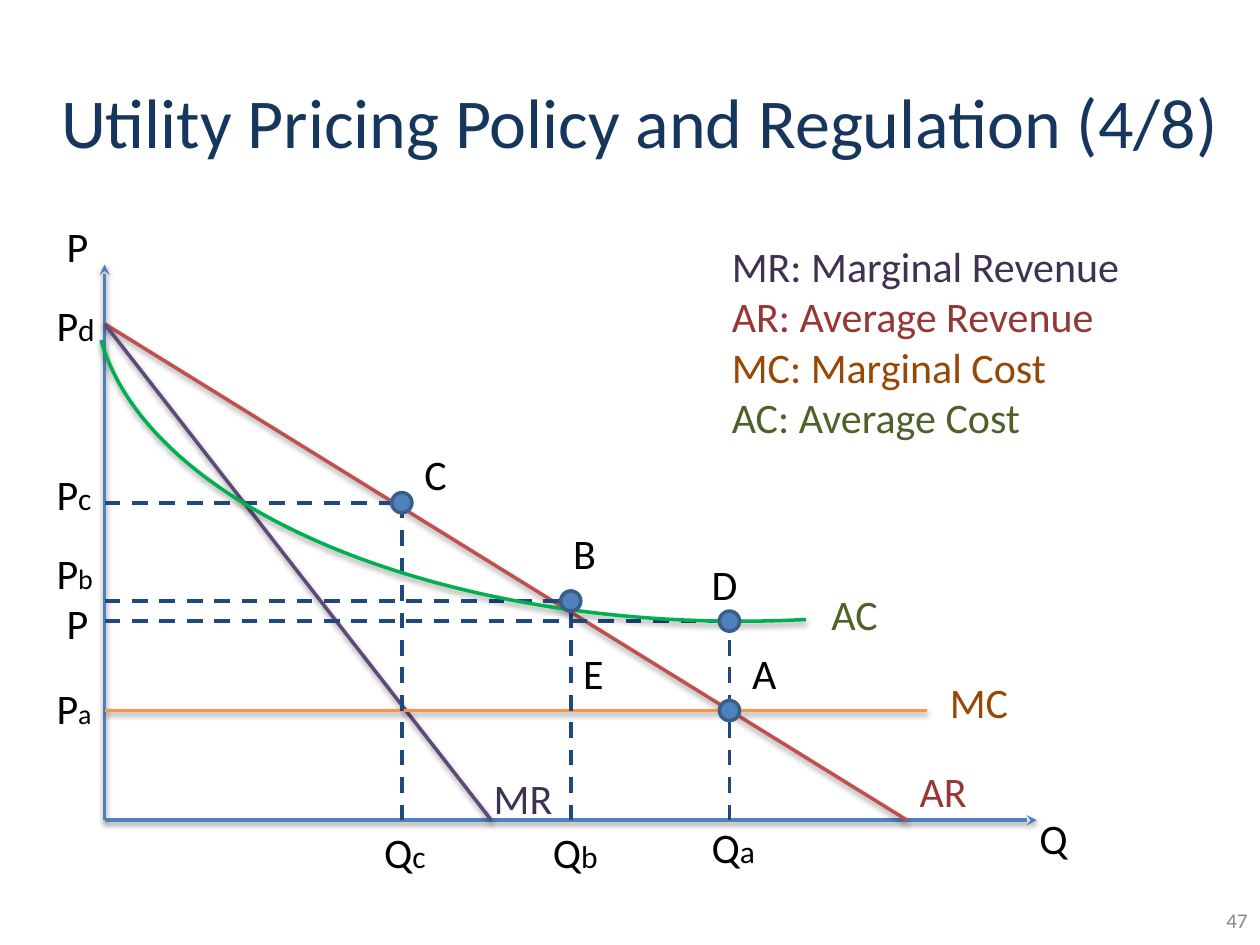
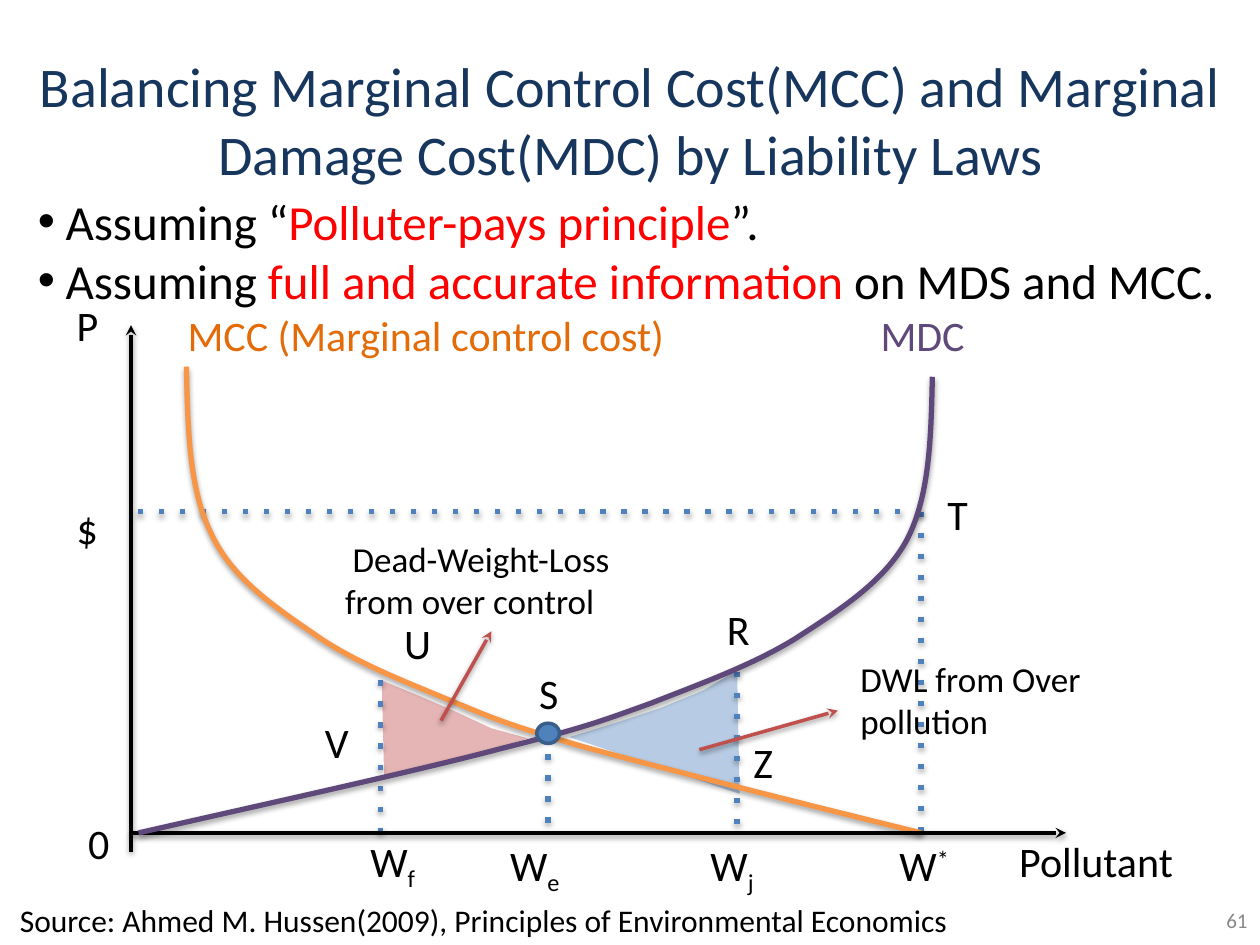
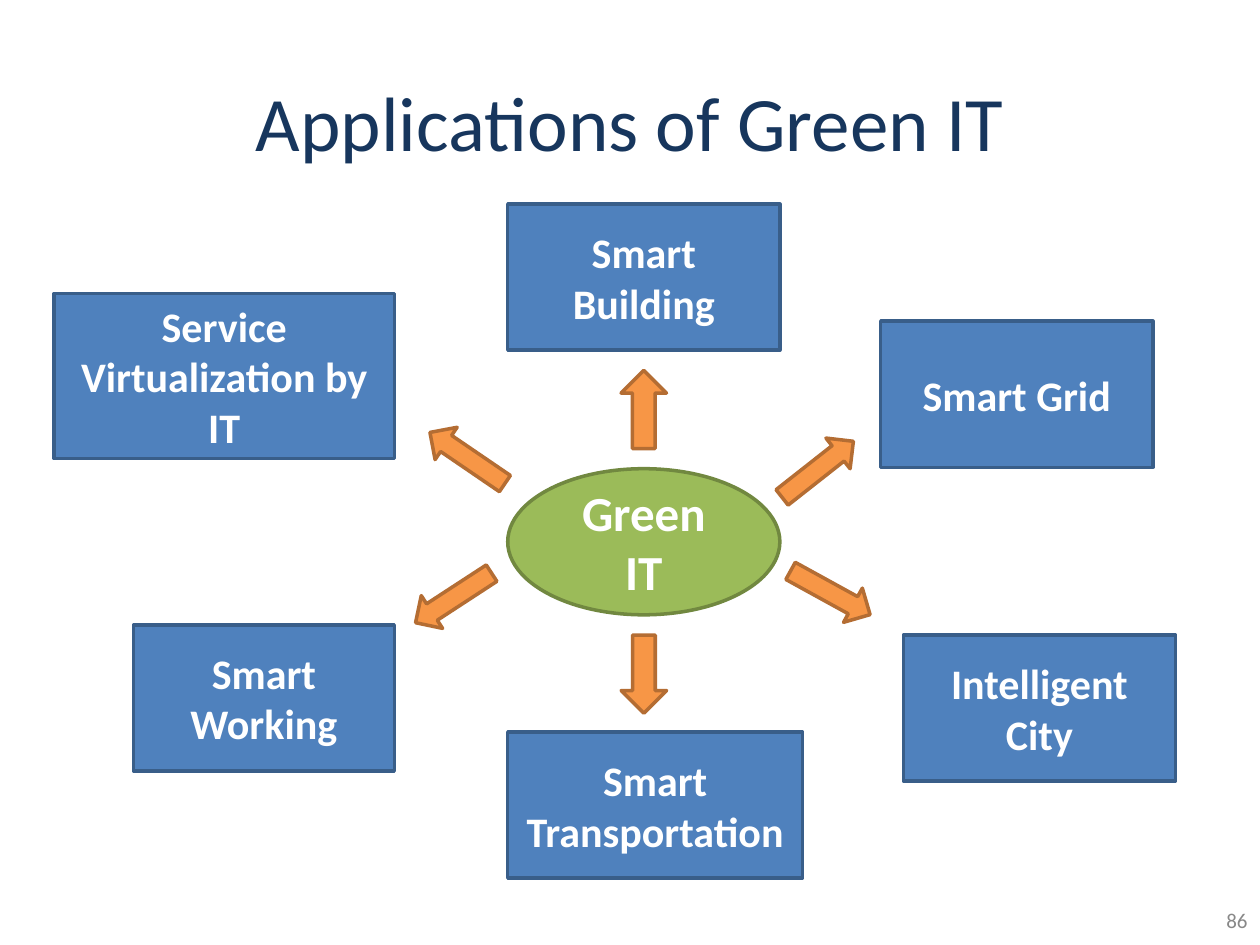
from dataclasses import dataclass
from typing import NamedTuple, Optional, Sequence

from lxml.etree import SubElement
from pptx import Presentation
from pptx.dml.color import RGBColor
from pptx.enum.shapes import MSO_CONNECTOR, MSO_SHAPE
from pptx.enum.text import MSO_ANCHOR as Anchor, MSO_AUTO_SIZE, PP_ALIGN as Align
from pptx.oxml.ns import qn
from pptx.util import Inches, Pt


# Theme and records
@dataclass(frozen=True)
class Theme:
    font: str = "Calibri"
    navy: str = "17365D"
    black: str = "000000"
    white: str = "FFFFFF"
    grey: str = "888888"
    red: str = "FF0000"
    blue: str = "4F81BD"
    blue_edge: str = "395E89"
    guide: str = "1F497D"
    brick: str = "C0504D"
    purple: str = "5F497A"
    orange: str = "F79646"
    orange_edge: str = "B46D33"
    orange_text: str = "E36C09"
    lime: str = "9BBB59"
    lime_edge: str = "718840"
    green: str = "00B050"
    mr_text: str = "3F3151"
    ar_text: str = "953734"
    mc_text: str = "974806"
    ac_text: str = "4F6128"
    over_control: str = "D99593"
    over_pollution: str = "B7CCE4"
    hub: int = 28
    body: int = 28
    label: int = 24
    callout: int = 20
    small: int = 18
    number: int = 12


T = Theme()


class Point(NamedTuple):
    x: float
    y: float


class Label(NamedTuple):
    """A chart label; its index is a smaller or a raised/lowered run."""
    text: str
    x: float
    y: float
    width: float = 0.55
    color: str = T.black
    index: str = ""
    index_size: Optional[int] = None
    baseline: int = 0


class Line(NamedTuple):
    start: Point
    end: Point
    color: str
    width: float = 2
    dash: str = ""
    arrow: bool = False
    shadow: bool = True


class Box(NamedTuple):
    text: str
    x: float
    y: float
    width: float = 2.16
    height: float = 1.16


class Arrow(NamedTuple):
    x: float
    y: float
    angle: float
    width: float = 0.72
    height: float = 0.31


# Drawing helpers
def rgb(color: str) -> RGBColor:
    return RGBColor.from_string(color)


def set_font(font, size: float, color: str, bold: Optional[bool] = None) -> None:
    font.name, font.size, font.bold = T.font, Pt(size), bold
    font.color.rgb = rgb(color)


def set_shadow(sp, on: bool) -> None:
    """Give a shape its effect list; call it after the line is set."""
    effects = SubElement(sp._element.spPr, qn("a:effectLst"))
    if on:
        shadow = SubElement(effects, qn("a:outerShdw"), blurRad="40000", dist="20000",
                            dir="5400000", rotWithShape="0")
        color = SubElement(shadow, qn("a:srgbClr"), val=T.black)
        SubElement(color, qn("a:alpha"), val="38000")


def style(sp, fill: str = "", line: str = "", width: float = 2, shadow: bool = False) -> None:
    if fill:
        sp.fill.solid()
        sp.fill.fore_color.rgb = rgb(fill)
    else:
        sp.fill.background()
    if line:
        sp.line.color.rgb = rgb(line)
        sp.line.width = Pt(width)
    else:
        sp.line.fill.background()
    set_shadow(sp, shadow)


def add_line(shapes, line: Line) -> None:
    ends = [Inches(v) for v in (*line.start, *line.end)]
    sp = shapes.add_connector(MSO_CONNECTOR.STRAIGHT, *ends)
    sp.line.color.rgb = rgb(line.color)
    sp.line.width = Pt(line.width)
    ln = sp.line._get_or_add_ln()
    if line.dash:
        SubElement(ln, qn("a:prstDash"), val=line.dash)
    if line.arrow:
        SubElement(ln, qn("a:tailEnd"), type="stealth")
    set_shadow(sp, line.shadow)


def add_shape(shapes, kind, x: float, y: float, width: float, height: float):
    return shapes.add_shape(kind, Inches(x), Inches(y), Inches(width), Inches(height))


def add_dot(shapes, center: Point, width: float = 0.16, height: float = 0.16) -> None:
    sp = add_shape(shapes, MSO_SHAPE.OVAL, center.x - width / 2, center.y - height / 2,
                   width, height)
    style(sp, T.blue, T.blue_edge)


def add_text(shapes, lines: Sequence[tuple[str, str]], x: float, y: float, width: float,
             height: float = 0.5, size: float = T.label):
    """Add a text box with one paragraph for each (text, color) pair."""
    tf = shapes.add_textbox(Inches(x), Inches(y), Inches(width), Inches(height)).text_frame
    tf.word_wrap = True
    for i, (text, color) in enumerate(lines):
        p = tf.add_paragraph() if i else tf.paragraphs[0]
        p.text = text
        set_font(p.font, size, color)
    return tf


def add_label(shapes, label: Label) -> None:
    tf = add_text(shapes, [(label.text, label.color)], label.x, label.y, label.width)
    if label.index:
        r = tf.paragraphs[0].add_run()
        r.text = label.index
        if label.index_size:
            r.font.size = Pt(label.index_size)
        if label.baseline:
            r._r.get_or_add_rPr().set("baseline", str(label.baseline * 1000))


def add_outline(shapes, points: Sequence[tuple[float, float]], close: bool):
    start, *rest = [(Inches(x), Inches(y)) for x, y in points]
    builder = shapes.build_freeform(*start)
    builder.add_line_segments(rest, close=close)
    return builder.convert_to_shape()


def add_curve(shapes, points: Sequence[tuple[float, float]], color: str) -> None:
    """Draw a start point and triples of Bézier points as one curve."""
    sp = add_outline(shapes, points, close=False)
    outline = next(sp._element.iter(qn("a:path")))
    segments = outline.findall(qn("a:lnTo"))
    for i in range(0, len(segments), 3):
        bezier = SubElement(outline, qn("a:cubicBezTo"))
        for segment in segments[i:i + 3]:
            bezier.append(segment[0])
            outline.remove(segment)
    style(sp, line=color, width=3, shadow=True)


def place(sp, x: float, y: float, width: float, height: float) -> None:
    sp.left, sp.top, sp.width, sp.height = map(Inches, (x, y, width, height))
    sp.text_frame.auto_size = MSO_AUTO_SIZE.NONE


def new_slide(prs, layout: int, title: str, size: int, number: int,
              frame: tuple[float, float, float, float]):
    s = prs.slides.add_slide(prs.slide_layouts[layout])
    sp = s.shapes.title
    place(sp, *frame)
    sp.text_frame.vertical_anchor = Anchor.MIDDLE
    p = sp.text_frame.paragraphs[0]
    p.text, p.alignment = title, Align.CENTER
    set_font(p.font, size, T.navy)
    tf = add_text(s.shapes, [(str(number), T.grey)], 7.67, 7.1, 2.33, 0.4, T.number)
    tf.vertical_anchor = Anchor.MIDDLE
    tf.paragraphs[0].alignment = Align.RIGHT
    return s


# Slide 1: utility pricing
def pricing_slide(prs) -> None:
    s = new_slide(prs, 5, "Utility Pricing Policy and Regulation (4/8)", 40, 47,
                  (0.35, 0.68, 9.45, 0.55))
    origin, top = Point(0.83, 6.51), Point(0.83, 2.57)
    c, b, d, a = Point(3.19, 3.99), Point(4.53, 4.77), Point(5.79, 4.93), Point(5.79, 5.64)

    # Axes, revenue and cost lines
    lines = [
        Line(origin, Point(origin.x, 2.1), T.blue, arrow=True),
        Line(origin, Point(8.23, origin.y), T.blue, arrow=True),
        Line(top, Point(7.2, origin.y), T.brick),
        Line(top, Point(3.9, origin.y), T.purple),
        Line(Point(origin.x, a.y), Point(7.36, a.y), T.orange),
    ]
    # Guides from each point to both axes
    for point in (c, b, d):
        for foot in (Point(point.x, origin.y), Point(origin.x, point.y)):
            lines.append(Line(foot, point, T.guide, 2.25, "dash", shadow=False))
    for line in lines:
        add_line(s.shapes, line)

    # Average cost curve
    arc = add_shape(s.shapes, MSO_SHAPE.ARC, 0.75, -0.27, 10.24, 5.2)
    arc.rotation = 180
    arc.adjustments[0], arc.adjustments[1] = 155.1, 213.5
    style(arc, line=T.green, shadow=True)

    for point in (c, b, d, a):
        add_dot(s.shapes, point)

    for label in (
        Label("P", 0.43, 1.7), Label("Q", 8.15, 6.4), Label("P", 0.43, 4.69),
        Label("D", 5.55, 4.38), Label("A", 5.87, 5.09), Label("B", 4.45, 4.14),
        Label("E", 4.53, 5.09), Label("C", 3.27, 3.51),
        Label("MC", 7.44, 5.32, 0.79, T.mc_text),
        Label("AR", 7.2, 6.03, 0.87, T.ar_text),
        Label("MR", 3.82, 6.08, 0.87, T.mr_text),
        Label("AC", 6.5, 4.62, 0.87, T.ac_text),
        Label("P", 0.35, 2.33, index="d", index_size=18),
        Label("P", 0.35, 3.67, index="c", index_size=18),
        Label("P", 0.35, 4.3, index="b", index_size=16),
        Label("P", 0.35, 5.37, index="a", index_size=16),
        Label("Q", 5.55, 6.47, 0.71, index="a", index_size=18),
        Label("Q", 4.29, 6.51, 0.63, index="b", index_size=18),
        Label("Q", 2.95, 6.51, index="c", index_size=18),
    ):
        add_label(s.shapes, label)

    add_text(s.shapes, [
        ("MR: Marginal Revenue", T.mr_text), ("AR: Average Revenue", T.ar_text),
        ("MC: Marginal Cost", T.mc_text), ("AC: Average Cost", T.ac_text),
    ], 5.71, 1.86, 3.7, 1.72)


# Slide 2: liability laws
def liability_slide(prs) -> None:
    s = new_slide(prs, 1, "Balancing Marginal Control Cost(MCC) and Marginal "
                  "Damage Cost(MDC) by Liability Laws", 32, 61, (0.2, 0.44, 9.61, 1.01))

    # Assumptions
    body = s.placeholders[1]
    place(body, 0.2, 1.47, 9.57, 1.04)
    tf = body.text_frame
    for i, parts in enumerate((
        ("Assuming “", "Polluter-pays principle", "”."),
        ("Assuming ", "full and accurate information ", "on MDS and MCC."),
    )):
        p = tf.add_paragraph() if i else tf.paragraphs[0]
        pPr = p._p.get_or_add_pPr()
        pPr.set("marL", str(Inches(0.22)))
        pPr.set("indent", str(Inches(-0.22)))
        p.space_before = Pt(0)
        set_font(p.font, T.body, T.black)
        for text in parts:
            r = p.add_run()
            r.text = text
            if text == parts[1]:
                r.font.color.rgb = rgb(T.red)

    # Dead-weight-loss areas
    area = add_outline(s.shapes, [(3.03, 5.4), (3.05, 6.18), (3.5, 6.08), (4.19, 5.86),
                                  (3.9, 5.78), (3.62, 5.65), (3.32, 5.52)], close=True)
    style(area, T.over_control)
    color = next(area._element.spPr.iter(qn("a:srgbClr")))
    SubElement(color, qn("a:alpha"), val="69000")
    area = add_outline(s.shapes, [(5.85, 5.32), (5.87, 6.3), (4.52, 5.85), (4.94, 5.72),
                                  (5.24, 5.62), (5.58, 5.48)], close=True)
    style(area, T.over_pollution)

    # Chart: guides, curves, axes, labels
    chart = s.shapes.add_group_shape().shapes
    origin, t = Point(1.04, 6.61), Point(7.31, 4.06)
    for start, end in (
        (Point(4.35, 5.82), Point(4.35, 6.64)),
        (Point(5.85, 5.33), Point(5.85, 6.64)),
        (Point(3.02, 5.4), Point(3.02, 6.64)),
        (t, Point(t.x, origin.y)),
        (t, Point(1.06, t.y)),
    ):
        add_line(chart, Line(start, end, T.blue, 3, "dot"))
    add_curve(chart, [
        (1.48, 2.91), (1.49, 3.39), (1.5, 3.87), (1.67, 4.22), (1.83, 4.58), (2.17, 4.81),
        (2.49, 5.03), (2.8, 5.25), (3.19, 5.4), (3.55, 5.55), (3.91, 5.7), (4.02, 5.75),
        (4.64, 5.93), (5.27, 6.1), (6.29, 6.36), (7.31, 6.61)], T.orange)
    for end in (Point(8.46, origin.y), Point(origin.x, 2.58)):
        add_line(chart, Line(origin, end, T.black, arrow=True))
    # Stub of the vertical axis below the origin
    add_line(chart, Line(origin, Point(origin.x, 6.76), T.black))
    add_curve(chart, [
        (7.4, 2.99), (7.39, 3.46), (7.38, 3.93), (7.2, 4.28), (7.02, 4.62), (6.65, 4.85),
        (6.31, 5.07), (5.97, 5.28), (5.55, 5.43), (5.17, 5.58), (4.78, 5.72), (4.66, 5.77),
        (3.98, 5.94), (3.3, 6.12), (2.2, 6.36), (1.1, 6.61)], T.purple)
    add_dot(chart, Point(4.35, 5.82), 0.18)
    for label in (
        Label("MDC", 6.89, 2.41, 2.03, T.purple),
        Label("MCC (Marginal control cost)", 1.39, 2.41, 4.63, T.orange_text),
        Label("P", 0.51, 2.33), Label("0", 0.6, 6.44), Label("$", 0.51, 3.94),
        Label("T", 7.42, 3.83), Label("S", 4.18, 5.25), Label("R", 5.67, 4.74),
        Label("U", 3.11, 4.85), Label("V", 2.48, 5.64), Label("Z", 5.88, 5.8),
        Label("Pollutant", 7.99, 6.58, 1.81),
        Label("W", 2.84, 6.58, 0.72, index="f", baseline=-25),
        Label("W", 3.95, 6.61, 0.71, index="e", baseline=-25),
        Label("W", 5.54, 6.61, 0.71, index="j", baseline=-25),
        Label("W", 7.04, 6.61, 0.71, index="*", baseline=30),
    ):
        add_label(chart, label)

    # Callouts and source
    tf = add_text(s.shapes, [("Dead-Weight-Loss from over control", T.black)],
                  2.64, 4.22, 2.84, 0.77, T.callout)
    tf.paragraphs[0]._p.get_or_add_pPr().set("indent", str(Inches(0.06)))
    add_text(s.shapes, [("DWL from Over pollution", T.black)], 6.73, 5.17, 2.64, 0.77, T.callout)
    add_line(s.shapes, Line(Point(3.5, 5.72), Point(3.9, 5.01), T.brick, arrow=True))
    add_line(s.shapes, Line(Point(5.55, 5.95), Point(6.65, 5.64), T.brick, arrow=True))
    add_text(s.shapes, [("Source: Ahmed M. Hussen(2009), Principles of Environmental Economics",
                         T.black)], 0.06, 7.1, 7.84, 0.4, T.small)


# Slide 3: applications around a hub
def add_node(shapes, kind, box: Box, fill: str, edge: str, size: int) -> None:
    sp = add_shape(shapes, kind, box.x, box.y, box.width, box.height)
    style(sp, fill, edge)
    tf = sp.text_frame
    tf.word_wrap, tf.vertical_anchor = True, Anchor.MIDDLE
    tf.text = box.text
    for p in tf.paragraphs:
        p.alignment = Align.CENTER
        set_font(p.font, size, T.white, bold=True)


def applications_slide(prs) -> None:
    s = new_slide(prs, 5, "Applications of Green IT", 44, 86, (0.5, 0.68, 9, 0.55))
    add_node(s.shapes, MSO_SHAPE.OVAL, Box("Green IT", 4.03, 3.72), T.lime, T.lime_edge, T.hub)
    for box in (
        Box("Smart Transportation", 4.03, 5.81, 2.34),
        Box("Intelligent\nCity", 7.17, 5.04),
        Box("Smart Grid", 6.99, 2.55),
        Box("Smart Building", 4.03, 1.62),
        Box("Service Virtualization by IT", 0.43, 2.33, 2.7, 1.31),
        Box("Smart Working", 1.06, 4.96, 2.07),
    ):
        add_node(s.shapes, MSO_SHAPE.RECTANGLE, box, T.blue, T.blue_edge, T.label)
    for arrow in (
        Arrow(6.23, 4.55, 28.8), Arrow(4.8, 5.17, 90, 0.62, 0.36), Arrow(3.24, 4.59, 146.9),
        Arrow(3.35, 3.48, 214.3), Arrow(4.8, 3.07, 270, 0.62, 0.36), Arrow(6.13, 3.57, 321.8),
    ):
        sp = add_shape(s.shapes, MSO_SHAPE.RIGHT_ARROW, arrow.x, arrow.y,
                       arrow.width, arrow.height)
        sp.rotation = arrow.angle
        style(sp, T.orange, T.orange_edge)


def main() -> None:
    prs = Presentation()
    prs.slide_width, prs.slide_height = Inches(10), Inches(7.5)
    pricing_slide(prs)
    liability_slide(prs)
    applications_slide(prs)
    prs.save("out.pptx")


if __name__ == "__main__":
    main()
